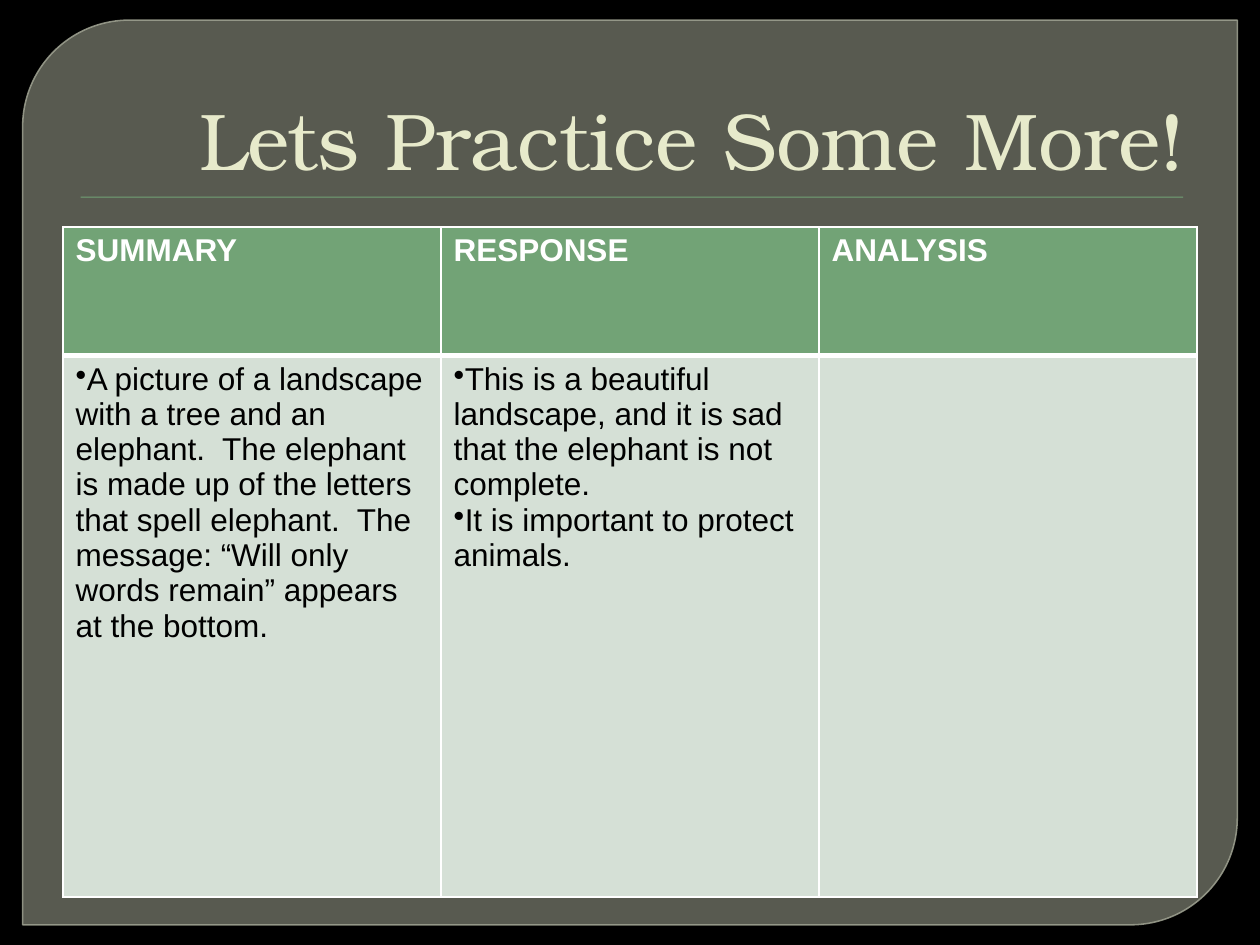
"""Build the practice slide with its summary, response and analysis table."""
from dataclasses import dataclass

from lxml import etree
from pptx import Presentation
from pptx.dml.color import RGBColor
from pptx.enum.shapes import MSO_SHAPE
from pptx.enum.text import MSO_ANCHOR, PP_ALIGN
from pptx.oxml.ns import qn
from pptx.util import Inches, Pt

ROUND_DIAGONAL = MSO_SHAPE.ROUND_2_DIAG_RECTANGLE
RECTANGLE = MSO_SHAPE.RECTANGLE
BOTTOM = MSO_ANCHOR.BOTTOM
RIGHT = PP_ALIGN.RIGHT
LEFT = PP_ALIGN.LEFT

HEADINGS = ["SUMMARY", "RESPONSE", "ANALYSIS"]
NOTES = [
    ["A picture of a landscape with a tree and an elephant.  The elephant is made up "
     "of the letters that spell elephant.  The message: “Will only words remain” "
     "appears at the bottom."],
    ["This is a beautiful landscape, and it is sad that the elephant is not complete.",
     "It is important to protect animals."],
    [],
]


@dataclass(frozen=True)
class Theme:
    """Colours, fonts and type sizes of the slide."""
    background: str = "000000"
    panel: str = "888B7B"
    panel_line: str = "9DA090"
    accent: str = "72A376"
    body_fill: str = "D5E0D6"
    border: str = "FFFFFF"
    title_text: str = "E7EACB"
    header_text: str = "FFFFFF"
    body_text: str = "000000"
    title_font: str = "TeX Gyre Bonum"
    body_font: str = "Arial"
    title_size: int = 46
    body_size: int = 18


def write_text(text_frame, lines, *, font, size, color, bold=False, align=LEFT, bullet=None):
    """Write one formatted paragraph for each line."""
    for index, line in enumerate(lines):
        paragraph = text_frame.add_paragraph() if index else text_frame.paragraphs[0]
        paragraph.alignment = align
        if bullet:
            properties = paragraph._p.get_or_add_pPr()
            etree.SubElement(properties, qn("a:buChar"), char=bullet)
        run = paragraph.add_run()
        run.text = line
        run.font.name = font
        run.font.size = Pt(size)
        run.font.bold = bold
        run.font.color.rgb = RGBColor.from_string(color)


def set_opacity(color_format_parent, percent):
    """Make the solid colour below an element partly transparent."""
    color = color_format_parent.find(qn("a:solidFill"))[0]
    etree.SubElement(color, qn("a:alpha"), val=str(percent * 1000))


def set_borders(cell, color, widths):
    """Draw the left, right, top and bottom borders of a cell."""
    properties = cell._tc.get_or_add_tcPr()
    for side, width in zip("LRTB", widths):
        line = etree.SubElement(properties, qn(f"a:ln{side}"), w=str(Pt(width)))
        fill = etree.SubElement(line, qn("a:solidFill"))
        etree.SubElement(fill, qn("a:srgbClr"), val=color)


class SlideBuilder:
    """Holds the theme and the current slide."""

    def __init__(self, presentation, theme):
        self.theme = theme
        self.slide = presentation.slides.add_slide(presentation.slide_layouts[5])
        fill = self.slide.background.fill
        fill.solid()
        fill.fore_color.rgb = RGBColor.from_string(theme.background)

    def backdrop(self, kind, left, top, width, height, color):
        """Add a filled shape behind the title."""
        shape = self.slide.shapes.add_shape(
            kind, Inches(left), Inches(top), Inches(width), Inches(height))
        shape.shadow.inherit = False
        shape.fill.solid()
        shape.fill.fore_color.rgb = RGBColor.from_string(color)
        shape.line.fill.background()
        self.slide.shapes.title.element.addprevious(shape.element)
        return shape

    def panel(self):
        """Add the translucent panel with two rounded corners."""
        shape = self.backdrop(ROUND_DIAGONAL, 0.18, 0.16, 9.64, 7.18, self.theme.panel)
        shape.adjustments[0] = 0.118
        shape.adjustments[1] = 0
        shape.line.width = Pt(0.87)
        shape.line.color.rgb = RGBColor.from_string(self.theme.panel_line)
        properties = shape.element.spPr
        set_opacity(properties, 65)
        set_opacity(properties.find(qn("a:ln")), 88)

    def rule(self):
        """Add the thin rule below the title."""
        self.backdrop(RECTANGLE, 0.64, 1.56, 8.75, 0.01, self.theme.accent)

    def title(self, text):
        """Place and format the title."""
        title = self.slide.shapes.title
        title.left, title.top = Inches(0.5), Inches(0.28)
        title.width, title.height = Inches(9), Inches(1.25)
        title.text_frame.vertical_anchor = BOTTOM
        write_text(title.text_frame, [text], font=self.theme.title_font,
                   size=self.theme.title_size, color=self.theme.title_text, align=RIGHT)

    def cell(self, cell, lines, fill, widths, **text_format):
        """Fill, border and write one table cell."""
        set_borders(cell, self.theme.border, widths)
        cell.fill.solid()
        cell.fill.fore_color.rgb = RGBColor.from_string(fill)
        write_text(cell.text_frame, lines, font=self.theme.body_font,
                   size=self.theme.body_size, **text_format)

    def table(self, headings, notes):
        """Add the table with one column for each heading."""
        theme = self.theme
        table = self.slide.shapes.add_table(
            2, len(headings), Inches(0.5), Inches(1.8), Inches(9), Inches(5.32)).table
        table.horz_banding = False
        for row, height in zip(table.rows, (1.02, 4.3)):
            row.height = Inches(height)
        for column, (heading, lines) in enumerate(zip(headings, notes)):
            self.cell(table.cell(0, column), [heading], theme.accent, (1, 1, 1, 3),
                      color=theme.header_text, bold=True)
            self.cell(table.cell(1, column), lines, theme.body_fill, (1, 1, 3, 1),
                      color=theme.body_text, bullet="•")


def main():
    """Create and save the presentation."""
    presentation = Presentation()
    presentation.slide_width, presentation.slide_height = Inches(10), Inches(7.5)
    builder = SlideBuilder(presentation, Theme())
    builder.panel()
    builder.rule()
    builder.title("Lets Practice Some More!")
    builder.table(HEADINGS, NOTES)
    presentation.save("out.pptx")


if __name__ == "__main__":
    main()
